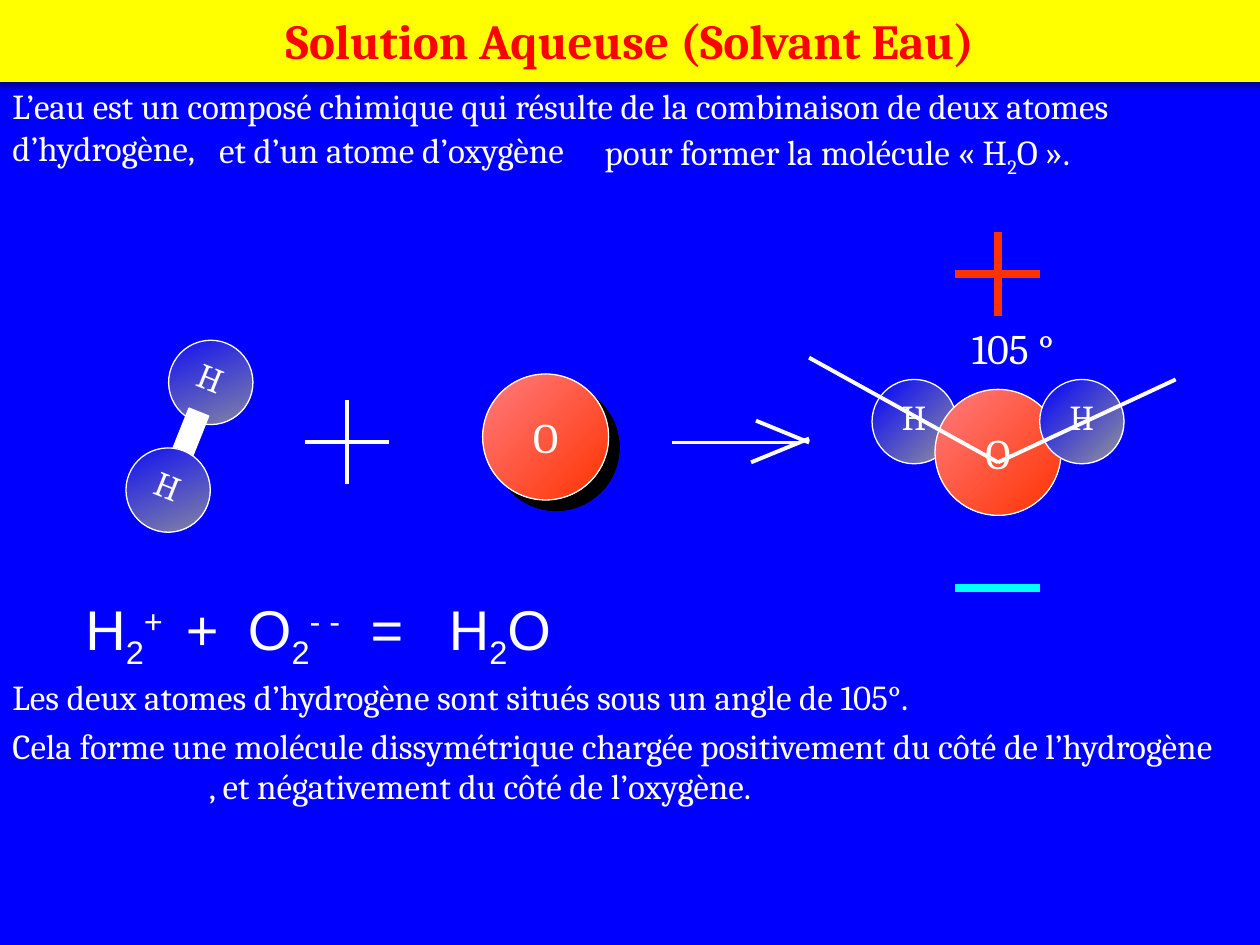
import pptx
import pptx.util
import pptx.dml.color
import pptx.enum.shapes
import pptx.enum.text
import pptx.oxml
import pptx.oxml.ns
from lxml import etree

Cm = pptx.util.Cm
Pt = pptx.util.Pt
qn = pptx.oxml.ns.qn
SHAPE = pptx.enum.shapes.MSO_SHAPE
ALIGN = pptx.enum.text.PP_ALIGN

WHITE = "FFFFFF"
HYDROGEN = ("0000FF", "969696")
OXYGEN = ("FF7C80", "FF3300")
H_SIZE, O_SIZE = 1.7, 2.54
TILT = 21.8


def rgb(value):
    return pptx.dml.color.RGBColor.from_string(value)


def add_run(p, text, size, font="Cambria", color=WHITE, base=0, bold=False):
    r = p.add_run()
    r.text = text
    r.font.size = Pt(size)
    r.font.name = font
    r.font.bold = bold
    r.font.color.rgb = rgb(color)
    if base:
        r.font._element.set("baseline", str(base * 1000))


def add_text(s, x, y, w, h, runs, size=20, font="Cambria", align=ALIGN.LEFT, rotation=0):
    tb = s.shapes.add_textbox(Cm(x), Cm(y), Cm(w), Cm(h))
    tb.rotation = rotation
    tf = tb.text_frame
    tf.word_wrap = True
    p = tf.paragraphs[0]
    p.alignment = align
    for text, base in runs:
        add_run(p, text, size, font, base=base)
    return p


def add_line(s, x1, y1, x2, y2, color=WHITE, width=2.25):
    line = s.shapes.add_connector(
        pptx.enum.shapes.MSO_CONNECTOR.STRAIGHT, Cm(x1), Cm(y1), Cm(x2), Cm(y2))
    line.line.color.rgb = rgb(color)
    line.line.width = Pt(width)
    etree.SubElement(line._element.spPr, qn("a:effectLst"))


def add_shadow(sp, alpha, blur, distance, angle):
    sp.shadow.inherit = False
    effects = sp._element.spPr.find(qn("a:effectLst"))
    shadow = etree.SubElement(
        effects, qn("a:outerShdw"), blurRad=str(Pt(blur)), dist=str(Pt(distance)),
        dir=str(angle * 60000), algn="ctr", rotWithShape="0")
    color = etree.SubElement(shadow, qn("a:srgbClr"), val="000000")
    etree.SubElement(color, qn("a:alpha"), val=str(alpha * 1000))


def add_outline(sp):
    sp.shadow.inherit = False
    sp.line.color.rgb = rgb(WHITE)
    sp.line.width = Pt(0.75)


def add_atom(s, x, y, symbol, rotation=0):
    if symbol == "H":
        d, colors, size, label_h, lift = H_SIZE, HYDROGEN, 20, 1.1, 0.1
    else:
        d, colors, size, label_h, lift = O_SIZE, OXYGEN, 24, 1.27, 0
    ball = s.shapes.add_shape(SHAPE.OVAL, Cm(x), Cm(y), Cm(d), Cm(d))
    ball.rotation = rotation
    ball.fill.gradient()
    ball.fill.gradient_angle = 315
    for stop, color, position in zip(ball.fill.gradient_stops, colors, (0, 1)):
        stop.color.rgb = rgb(color)
        stop.position = position
    add_outline(ball)
    label_w = 1.27
    add_text(s, x + (d - label_w) / 2, y + (d - label_h) / 2 - lift, label_w, label_h,
             [(symbol, 0)], size, align=ALIGN.CENTER, rotation=rotation)
    return ball


def add_title(s, x, y, w, h):
    title = s.shapes.title
    title.left, title.top, title.width, title.height = Cm(x), Cm(y), Cm(w), Cm(h)
    title.fill.solid()
    title.fill.fore_color.rgb = rgb("FFFF00")
    title.line.color.rgb = rgb("FFFF00")
    title.line.width = Pt(3)
    add_shadow(title, 38, 3.1, 1.6, 90)
    tf = title.text_frame
    tf.auto_size = pptx.enum.text.MSO_AUTO_SIZE.NONE
    tf.vertical_anchor = pptx.enum.text.MSO_ANCHOR.MIDDLE
    p = tf.paragraphs[0]
    p.alignment = ALIGN.CENTER
    add_run(p, "Solution Aqueuse (Solvant Eau)", 28, color="FF0000", bold=True)


def add_introduction(s, x, y, w):
    add_text(s, x, y, w, 1.96, [("L’eau est un composé chimique qui résulte de la combinaison "
                                 "de deux atomes d’hydrogène,", 0)])
    add_text(s, x + 4.17, y + 0.89, 9.53, 1.1, [("et d’un atome d’oxygène", 0)])
    add_text(s, x + 11.94, y + 0.94, 13.46, 1.1,
             [("pour former la molécule « H", 0), ("2", -25), ("O ».", 0)])


def add_hydrogen_pair(s, x, y):
    add_atom(s, x + 0.86, y, "H", TILT)
    bond = s.shapes.add_shape(SHAPE.RECTANGLE, Cm(x + 1.02), Cm(y + 1.4), Cm(0.43), Cm(1.27))
    bond.rotation = TILT
    bond.fill.solid()
    bond.fill.fore_color.rgb = rgb(WHITE)
    add_outline(bond)
    add_atom(s, x, y + 2.17, "H", TILT)


def add_sign(s, x, y, size, color=WHITE, width=2.25, plus=True):
    half = size / 2
    if plus:
        add_line(s, x + half, y, x + half, y + size, color, width)
    add_line(s, x, y + half, x + size, y + half, color, width)


def add_reaction_arrow(s, x, y):
    add_line(s, x, y + 0.44, x + 2.54, y + 0.44)
    add_line(s, x + 1.7, y, x + 2.77, y + 0.44)
    add_line(s, x + 1.6, y + 0.84, x + 2.77, y + 0.36)


def add_water_molecule(s, x, y):
    add_atom(s, x + 1.27, y + 1.27, "H")
    add_atom(s, x + 2.54, y + 1.47, "O")
    add_atom(s, x + 4.65, y + 1.27, "H")
    vertex = (x + 3.81, y + 2.94)
    add_line(s, x, y + 0.83, *vertex)
    add_line(s, x + 7.39, y + 1.27, *vertex)
    add_text(s, x + 2.31, y, 3.6, 1.27, [("105 °", 0)], 24, align=ALIGN.CENTER)


def add_equation(s, x, y):
    p = add_text(s, x, y, 11.43, 1.6,
                 [("H", 0), ("2", -25), ("+", 30), ("\t+\tO", 0), ("2", -25), ("- -", 30),
                  ("\t=\tH", 0), ("2", -25), ("O", 0)], 32, "Arial")
    tabs = etree.SubElement(p._p.get_or_add_pPr(), qn("a:tabLst"))
    for position in (2.03, 3.28, 5.75, 7.33):
        etree.SubElement(tabs, qn("a:tab"), pos=str(Cm(position)), algn="l")


def add_conclusion(s, x, y, w):
    add_text(s, x, y, w, 1.1,
             [("Les deux atomes d’hydrogène sont situés sous un angle de 105°.", 0)])
    add_text(s, x, y + 0.99, w, 1.1, [("Cela forme une molécule dissymétrique chargée "
                                       "positivement du côté de l’hydrogène", 0)])
    add_text(s, x + 3.96, y + 1.8, 14.17, 1.1,
             [(", et négativement du côté de l’oxygène.", 0)])


def main():
    prs = pptx.Presentation()
    prs.slide_width, prs.slide_height = Cm(25.4), Cm(19.05)
    s = prs.slides.add_slide(prs.slide_layouts[5])
    s.background.fill.solid()
    s.background.fill.fore_color.rgb = rgb("0000FF")
    add_title(s, 0, 0, 25.4, 1.6)
    add_introduction(s, 0, 1.57, 25.4)
    add_hydrogen_pair(s, 2.54, 6.86)
    add_sign(s, 6.14, 8.06, 1.7)
    add_shadow(add_atom(s, 9.73, 7.54, "O"), 100, 0, 8.5, 45)
    add_reaction_arrow(s, 13.54, 8.48)
    add_water_molecule(s, 16.31, 6.38)
    add_sign(s, 19.26, 4.67, 1.7, "FF3300", 4.5)
    add_sign(s, 19.26, 11.01, 1.7, "00FFFF", 4.5, plus=False)
    add_equation(s, 1.47, 11.86)
    add_conclusion(s, 0, 13.49, 25.4)
    prs.save("out.pptx")


if __name__ == "__main__":
    main()
